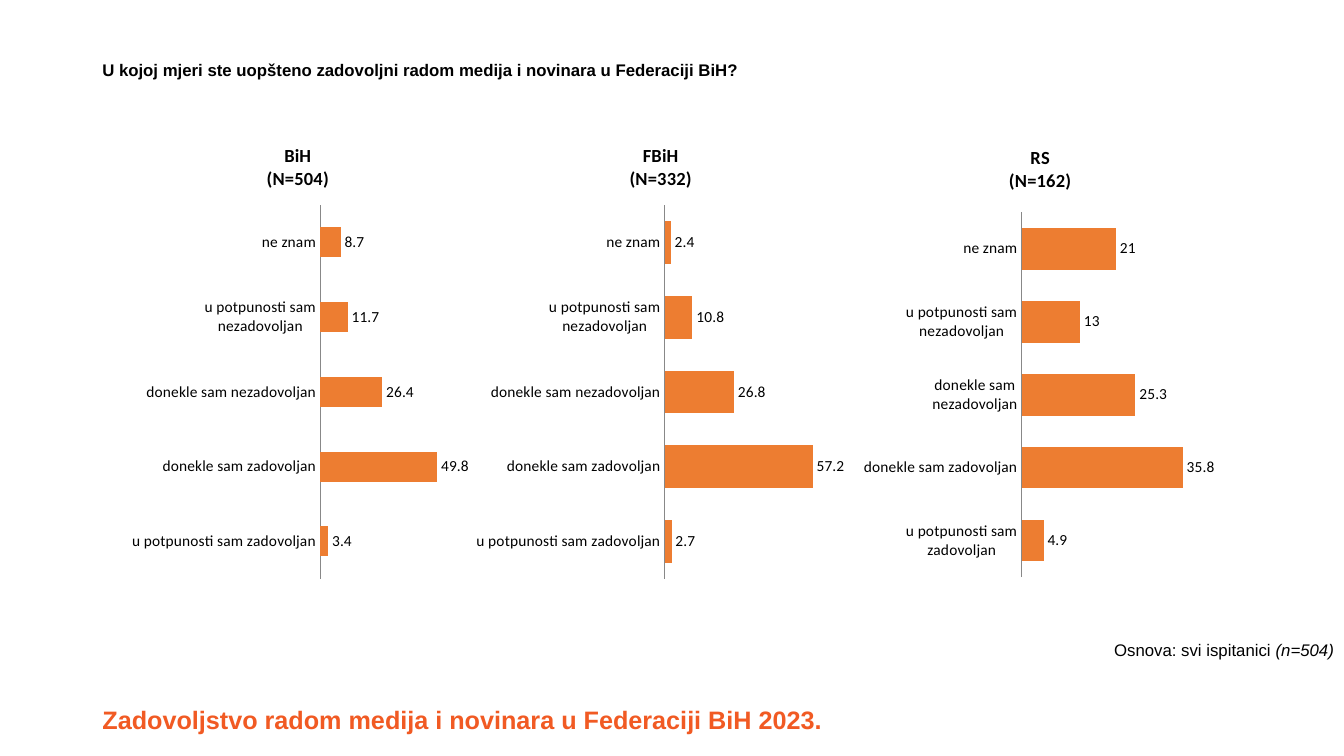
from lxml import etree
from pptx import Presentation
from pptx.chart.data import CategoryChartData
from pptx.dml.color import RGBColor
from pptx.enum import chart as ch, text
from pptx.oxml.ns import qn
from pptx.util import Pt

BLACK = RGBColor(0, 0, 0)
GREY = RGBColor(0x88, 0x88, 0x88)
ORANGE = RGBColor(0xED, 0x7D, 0x31)
RED = RGBColor(0xF1, 0x5A, 0x23)


def style(font, name, size, color, bold=False):
    font.name, font.size, font.bold = name, Pt(size), bold
    font.color.rgb = color


def place(plot, box):
    """Fix the inner plot area at x, y, w, h as shares of the chart."""
    for old in plot.findall(qn("c:layout")):
        plot.remove(old)
    lay = etree.Element(qn("c:layout"))
    man = etree.SubElement(lay, qn("c:manualLayout"))
    parts = [("layoutTarget", "inner"), ("xMode", "edge"), ("yMode", "edge")]
    parts += zip("xywh", box)
    for tag, val in parts:
        etree.SubElement(man, qn("c:" + tag)).set("val", str(val))
    plot.insert(0, lay)


prs = Presentation()
prs.slide_width, prs.slide_height = Pt(960), Pt(540)
slide = prs.slides.add_slide(prs.slide_layouts[5])

title = slide.shapes.title
title.left, title.top, title.width, title.height = Pt(66), Pt(499.7), Pt(606), Pt(29)
frame = title.text_frame
frame.text = "Zadovoljstvo radom medija i novinara u Federaciji BiH 2023."
frame.vertical_anchor = text.MSO_ANCHOR.TOP
frame.auto_size = text.MSO_AUTO_SIZE.NONE
para = frame.paragraphs[0]
para.alignment = text.PP_ALIGN.LEFT
style(para.font, "Arial", 18, RED, True)

base = slide.shapes.add_textbox(Pt(66), Pt(453.6), Pt(894), Pt(36))
base.text_frame.word_wrap = True
para = base.text_frame.paragraphs[0]
para.alignment = text.PP_ALIGN.RIGHT
style(para.font, "Arial", 12, BLACK)
para.add_run().text = "Osnova: svi ispitanici "
count = para.add_run()
count.text = "(n=504)"
count.font.italic = True

ask = slide.shapes.add_textbox(Pt(66), Pt(39), Pt(698), Pt(22))
ask.text_frame.word_wrap = True
para = ask.text_frame.paragraphs[0]
para.text = "U kojoj mjeri ste uopšteno zadovoljni radom medija i novinara u Federaciji BiH?"
style(para.font, "Arial", 12, BLACK, True)

moods = ["u potpunosti sam zadovoljan", "donekle sam zadovoljan",
         "donekle sam nezadovoljan", "u potpunosti sam nezadovoljan", "ne znam"]
# heading, size of sample, values, chart box, gap, axis top, plot box
groups = [
    ("BiH", 504, [3.4, 49.8, 26.4, 11.7, 8.7],
     (90, 89.3, 245.5, 330.5), 150, 60, (0.565, 0.173, 0.41, 0.808)),
    ("FBiH", 332, [2.7, 57.2, 26.8, 10.8, 2.4],
     (334.8, 89.3, 274.3, 330.5), 75, 70, (0.51, 0.173, 0.472, 0.808)),
    ("RS", 162, [4.9, 35.8, 25.3, 13, 21],
     (609.8, 90, 266.4, 354.2), 75, 40, (0.45, 0.174, 0.483, 0.736)),
]
for name, size, vals, box, gap, top, area in groups:
    data = CategoryChartData()
    data.categories = moods
    data.add_series("Series 1", vals)
    chart = slide.shapes.add_chart(
        ch.XL_CHART_TYPE.BAR_CLUSTERED, *map(Pt, box), data).chart
    style(chart.font, "Calibri", 11, BLACK)
    chart.has_legend = False

    chart.has_title = True
    head = chart.chart_title
    head.include_in_layout = False
    head.text_frame.text = f"{name}\n(N={size})"
    for para in head.text_frame.paragraphs:
        style(para.font, "Calibri", 13.2, BLACK, True)

    axis = chart.category_axis
    axis.major_tick_mark = ch.XL_TICK_MARK.NONE
    axis.has_major_gridlines = False
    axis.format.line.color.rgb = GREY
    axis.format.line.width = Pt(0.75)
    style(axis.tick_labels.font, "Calibri", 11, BLACK)

    scale = chart.value_axis
    scale.minimum_scale, scale.maximum_scale = 0, top
    scale.has_major_gridlines = False
    scale.visible = False

    bars = chart.plots[0]
    bars.gap_width, bars.overlap = gap, -25
    bars.vary_by_categories = False
    fill = bars.series[0].format.fill
    fill.solid()
    fill.fore_color.rgb = ORANGE
    bars.has_data_labels = True
    labels = bars.data_labels
    labels.show_value = True
    labels.position = ch.XL_LABEL_POSITION.OUTSIDE_END
    style(labels.font, "Calibri", 11, BLACK)
    place(chart.element.find(".//" + qn("c:plotArea")), area)

prs.save("out.pptx")
